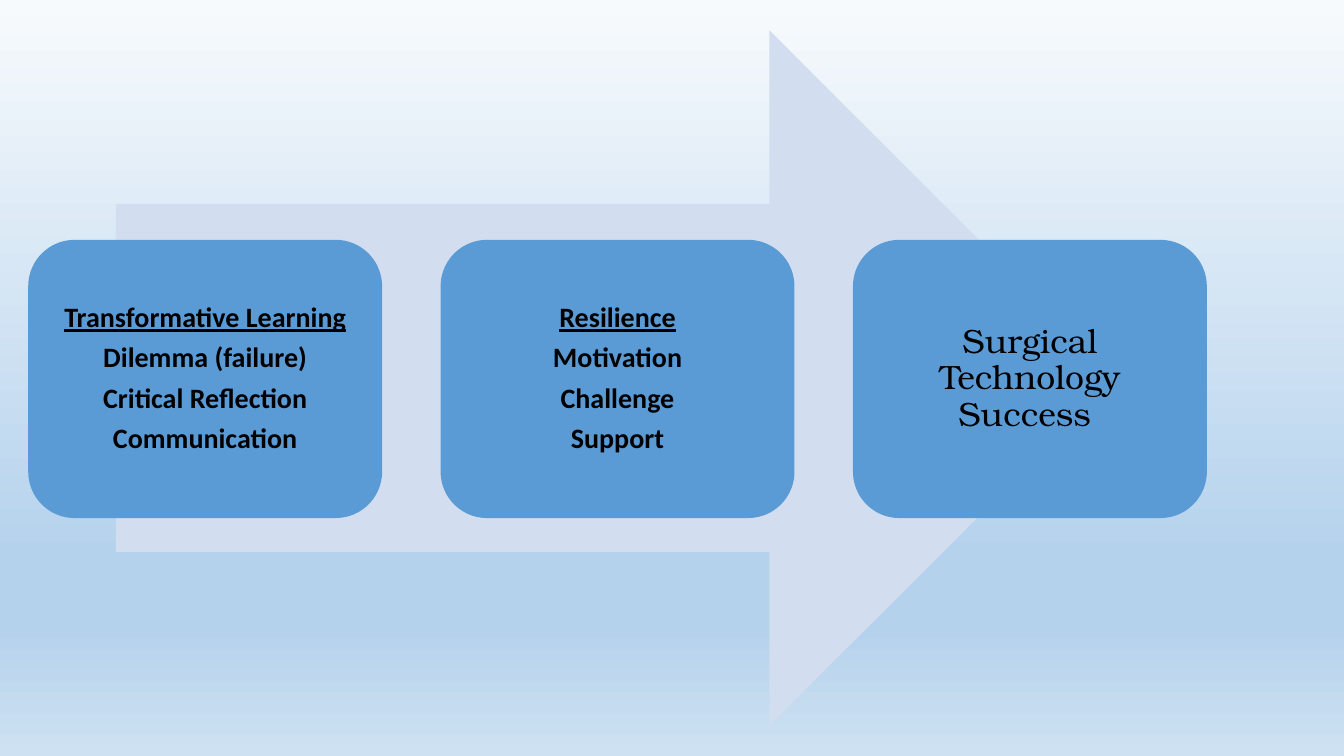
import pptx
import pptx.util
import pptx.oxml
import pptx.oxml.ns
import pptx.dml.color
import pptx.enum.shapes
import pptx.enum.text
from dataclasses import dataclass

Inches = pptx.util.Inches
Pt = pptx.util.Pt
Kind = pptx.enum.shapes.MSO_SHAPE

# Content: each card has an optional underlined head and its lines
CARDS = [
    ("Transformative Learning",
     ["Dilemma (failure)", "Critical Reflection", "Communication"]),
    ("Resilience", ["Motivation", "Challenge", "Support"]),
    (None, ["Surgical Technology Success "]),
]


@dataclass(frozen=True)
class Theme:
    sky: tuple = ((0, "F7FAFD"), (74, "B5D2EC"), (83, "B5D2EC"), (100, "CEE1F2"))
    arrow: str = "D2DEEF"
    card: str = "5B9BD5"
    ink: str = "000000"
    list_font: str = "Calibri"
    list_size: int = 20
    goal_font: str = "TeX Gyre Bonum"
    goal_size: int = 24


THEME = Theme()

# Layout in inches
ARROW = (1.15, 0.3, 9.93, 6.9)
LEFT, TOP, WIDE, HIGH = 0.28, 2.38, 3.51, 2.76
STEP = 4.09


def color(code):
    return pptx.dml.color.RGBColor.from_string(code)


def paint_sky(slide):
    fill = slide.background.fill
    fill.gradient()
    fill.gradient_angle = 270
    stops = slide.element.find(".//" + pptx.oxml.ns.qn("a:gsLst"))
    for stop in list(stops):
        stops.remove(stop)
    space = pptx.oxml.ns.nsdecls("a")
    for place, code in THEME.sky:
        stops.append(pptx.oxml.parse_xml(
            f'<a:gs {space} pos="{place * 1000}"><a:srgbClr val="{code}"/></a:gs>'))


def add_block(slide, kind, box, code):
    shape = slide.shapes.add_shape(kind, *map(Inches, box))
    shape.shadow.inherit = False
    shape.fill.solid()
    shape.fill.fore_color.rgb = color(code)
    shape.line.fill.background()
    return shape


def write_card(shape, head, lines):
    frame = shape.text_frame
    frame.word_wrap = True
    frame.vertical_anchor = pptx.enum.text.MSO_ANCHOR.MIDDLE
    pad = Inches(0.08 if head else 0.1)
    frame.margin_left = frame.margin_right = pad
    frame.margin_top = frame.margin_bottom = pad
    frame.text = "\n".join([head] + lines if head else lines)
    size = THEME.list_size if head else THEME.goal_size
    for para in frame.paragraphs:
        para.alignment = pptx.enum.text.PP_ALIGN.CENTER
        para.line_spacing = 0.9
        para.space_after = Pt(round(size * 0.35, 1))
        for run in para.runs:
            font = run.font
            font.name = THEME.list_font if head else THEME.goal_font
            font.size = Pt(size)
            font.bold = bool(head)
            font.underline = run.text == head
            font.color.rgb = color(THEME.ink)


def main():
    deck = pptx.Presentation()
    deck.slide_width, deck.slide_height = Inches(13.33), Inches(7.5)
    slide = deck.slides.add_slide(deck.slide_layouts[6])
    paint_sky(slide)

    # Arrow behind the cards
    add_block(slide, Kind.RIGHT_ARROW, ARROW, THEME.arrow)

    # Row of cards
    for place, (head, lines) in enumerate(CARDS):
        box = (LEFT + place * STEP, TOP, WIDE, HIGH)
        card = add_block(slide, Kind.ROUNDED_RECTANGLE, box, THEME.card)
        write_card(card, head, lines)

    deck.save("out.pptx")


if __name__ == "__main__":
    main()
